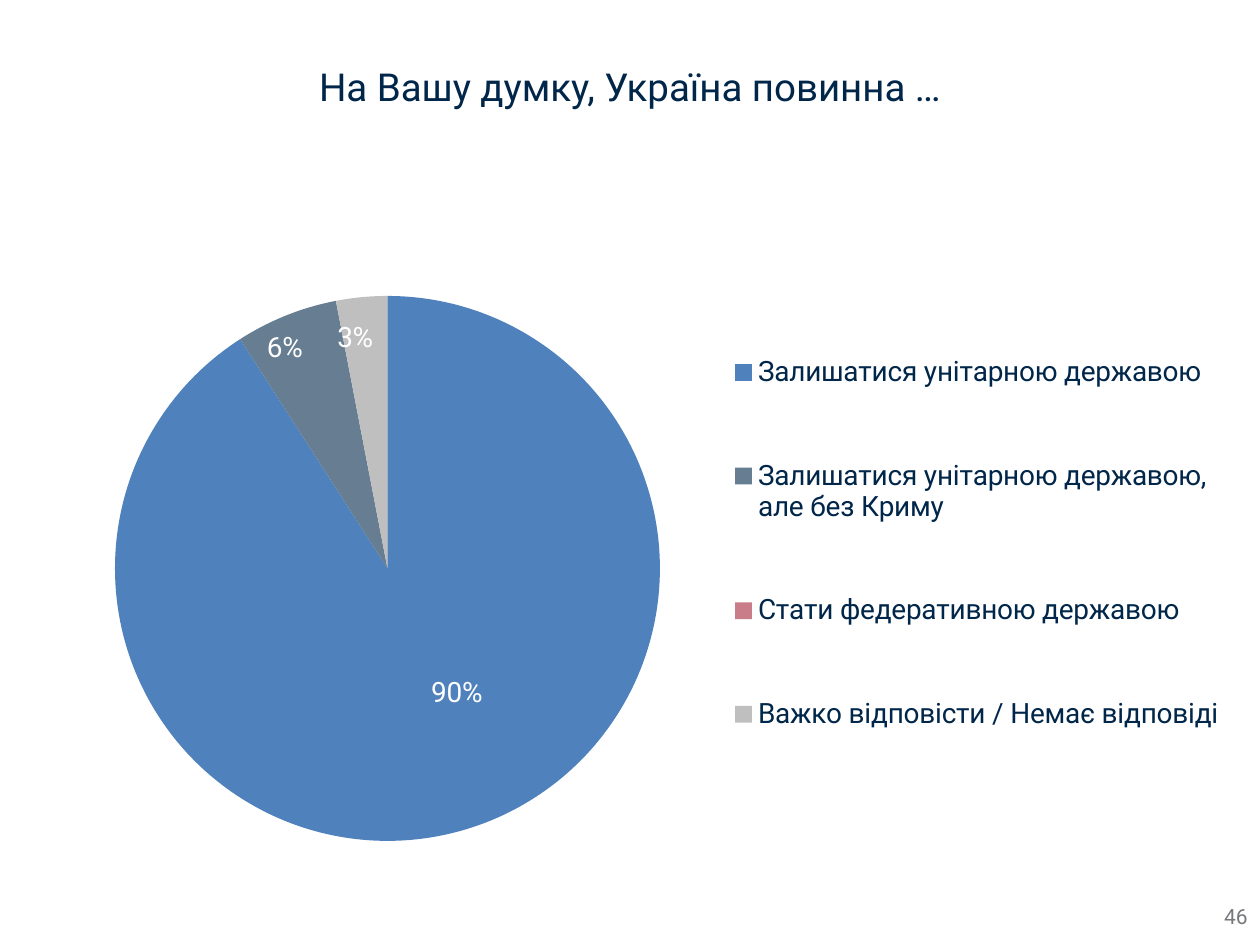
"""Build a slide with a pie chart of survey answers about the form of the state."""
from lxml import etree
from pptx import Presentation, util as u
from pptx.chart.data import CategoryChartData
from pptx.dml.color import RGBColor
from pptx.enum import chart as ch, text
from pptx.oxml.ns import qn

TITLE = "На Вашу думку, Україна повинна …"
PAGE = "46"
ANSWERS = [
    ("Залишатися унiтарною державою", 90, "4F81BD"),
    ("Залишатися унiтарною державою, але без Криму", 6, "667D92"),
    ("Стати федеративною державою", 0, "C87D88"),
    ("Важко відповісти / Немає відповіді", 3, "BFBFBF"),
]
PERCENT = '0"%";;'
NAVY, GREY, WHITE = "002649", "77787B", "FFFFFF"
TITLE_BOX = (39, 65, 1182, 42)
CHART_BOX = (39, 189, 1210, 736)
PAGE_BOX = (976, 891, 284, 50)
PLOT_BOX = (76, 107, 545, 545)
LEGEND_BOX = (684, 96, 508, 517)
INSIDE, CENTER = ch.XL_LABEL_POSITION.INSIDE_END, ch.XL_LABEL_POSITION.CENTER
LABELS = {0: (CENTER, (31, -6)), 1: (INSIDE, (-22, 10)), 3: (INSIDE, (-25, 18))}


def px(n):
    return u.Emu(n * 914400 // 126)


def color(value):
    return RGBColor.from_string(value)


def style(font, size, fill):
    for name, value in {"name": "Roboto", "size": u.Pt(size), "bold": False}.items():
        setattr(font, name, value)
    font.color.rgb = color(fill)


def place(sp, box):
    for name, value in zip(("left", "top", "width", "height"), box):
        setattr(sp, name, px(value))


def write(sp, words, size, fill, align):
    tf = sp.text_frame
    tf.word_wrap = True
    tf.vertical_anchor = text.MSO_ANCHOR.MIDDLE
    p = tf.paragraphs[0]
    p.alignment = align
    r = p.add_run()
    r.text = words
    style(r.font, size, fill)


def set_layout(parent, box, index, modes):
    for old in parent.findall(qn("c:layout")):
        parent.remove(old)
    layout = etree.Element(qn("c:layout"))
    manual = etree.SubElement(layout, qn("c:manualLayout"))
    shares = [n / CHART_BOX[2 + i % 2] for i, n in enumerate(box)]
    for name, value in {**modes, **dict(zip("xywh", shares))}.items():
        etree.SubElement(manual, qn("c:" + name)).set("val", str(value))
    parent.insert(index, layout)


def add_pie(s):
    data = CategoryChartData(number_format=PERCENT)
    data.categories = [name for name, _, _ in ANSWERS]
    data.add_series("Series 1", [value for _, value, _ in ANSWERS])
    chart = s.shapes.add_chart(ch.XL_CHART_TYPE.PIE, *map(px, CHART_BOX), data).chart
    chart.has_title = False
    style(chart.font, 10, "000000")

    chart.has_legend = True
    legend = chart.legend
    legend.position = ch.XL_LEGEND_POSITION.RIGHT
    legend.include_in_layout = False
    style(legend.font, 16, NAVY)

    plot = chart.plots[0]
    plot.vary_by_categories = True
    series = plot.series[0]
    for i, (_, _, fill) in enumerate(ANSWERS):
        fmt = series.points[i].format
        fmt.fill.solid()
        fmt.fill.fore_color.rgb = color(fill)
        fmt.line.fill.background()

    labels = series.data_labels
    labels.show_value = True
    labels.number_format = PERCENT
    labels.number_format_is_linked = False
    labels.position = INSIDE
    style(labels.font, 16, WHITE)
    for i, (position, _) in LABELS.items():
        label = series.points[i].data_label
        style(label.font, 16, WHITE)
        label.position = position

    root = chart.element
    edge = {"xMode": "edge", "yMode": "edge"}
    set_layout(root.find(".//" + qn("c:plotArea")), PLOT_BOX, 0,
               {"layoutTarget": "inner", **edge})
    set_layout(root.find(".//" + qn("c:legend")), LEGEND_BOX, 1, edge)
    label_nodes = root.findall(".//" + qn("c:dLbl"))
    for node, (_, offset) in zip(label_nodes, LABELS.values()):
        set_layout(node, offset, 1, {})


def main():
    prs = Presentation()
    prs.slide_width, prs.slide_height = px(1260), px(945)
    s = prs.slides.add_slide(prs.slide_layouts[5])
    add_pie(s)
    page = s.shapes.add_textbox(*map(px, PAGE_BOX))
    write(page, PAGE, 12, GREY, text.PP_ALIGN.RIGHT)
    title = s.shapes.title
    place(title, TITLE_BOX)
    write(title, TITLE, 22, NAVY, text.PP_ALIGN.CENTER)
    prs.save("out.pptx")


if __name__ == "__main__":
    main()
